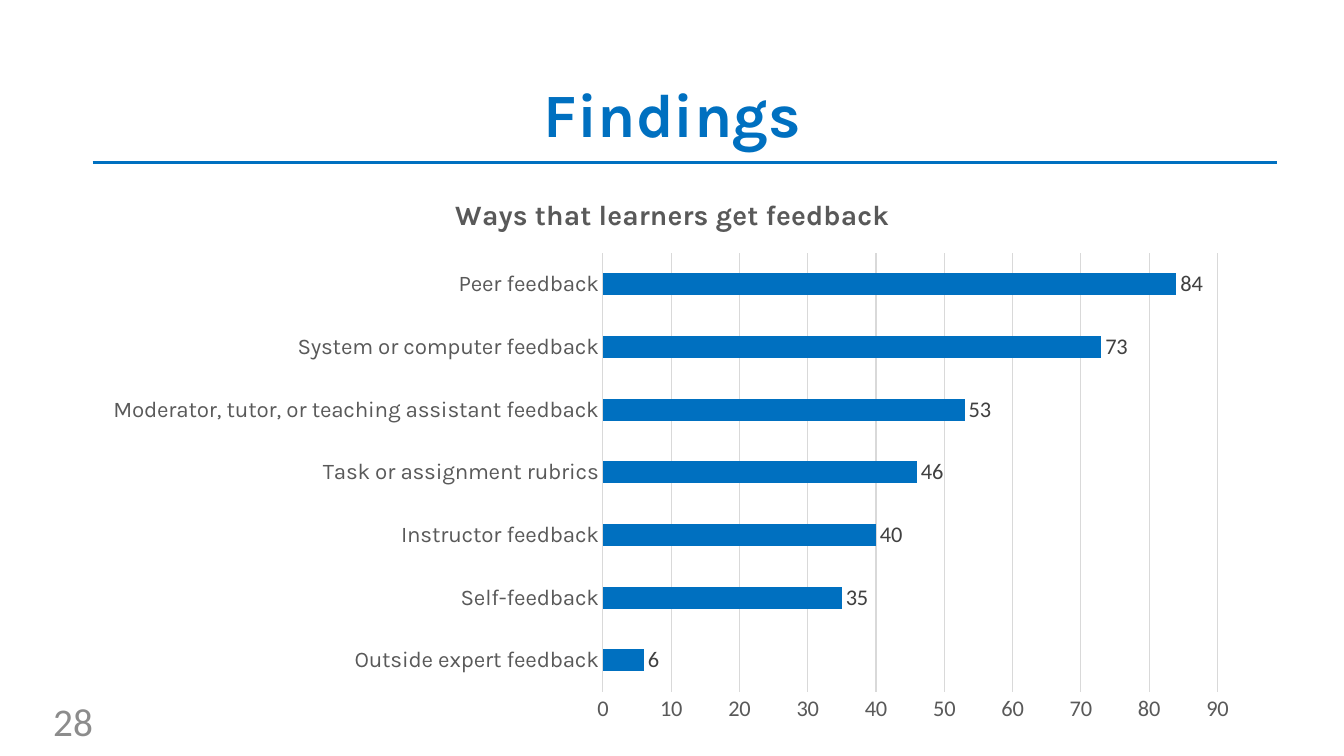
"""Build the Findings slide with a bar chart of the ways learners get feedback."""
from lxml import etree
from pptx import Presentation
from pptx.chart.data import CategoryChartData
from pptx.dml.color import RGBColor
from pptx.enum.chart import XL_CHART_TYPE, XL_LABEL_POSITION, XL_TICK_MARK
from pptx.enum.shapes import MSO_CONNECTOR
from pptx.enum.text import MSO_ANCHOR, PP_ALIGN
from pptx.oxml.ns import qn
from pptx.util import Inches, Pt

BAR_CLUSTERED = XL_CHART_TYPE.BAR_CLUSTERED
OUTSIDE_END = XL_LABEL_POSITION.OUTSIDE_END
NO_TICK = XL_TICK_MARK.NONE
STRAIGHT = MSO_CONNECTOR.STRAIGHT
MIDDLE = MSO_ANCHOR.MIDDLE
CENTER, RIGHT = PP_ALIGN.CENTER, PP_ALIGN.RIGHT

BLUE, TEXT_GRAY, GRID_GRAY = "0070C0", "595959", "D9D9D9"
FEEDBACK = {
    "Outside expert feedback": 6,
    "Self-feedback": 35,
    "Instructor feedback": 40,
    "Task or assignment rubrics": 46,
    "Moderator, tutor, or teaching assistant feedback": 53,
    "System or computer feedback": 73,
    "Peer feedback": 84,
}
PLOT_LAYOUT = {"x": 0.44, "y": 0.14, "w": 0.53, "h": 0.78}


def rgb(color):
    return RGBColor.from_string(color)


def style(font, name, size, color, bold=False):
    font.name, font.size, font.bold = name, Pt(size), bold
    font.color.rgb = rgb(color)


prs = Presentation()
prs.slide_width, prs.slide_height = Inches(13.33), Inches(7.5)
slide = prs.slides.add_slide(prs.slide_layouts[5])

title = slide.shapes.title
title.left, title.top = Inches(0.92), Inches(0.44)
title.width, title.height = Inches(11.5), Inches(1.45)
title.text_frame.vertical_anchor = MIDDLE
heading = title.text_frame.paragraphs[0]
heading.alignment = CENTER
heading.line_spacing = 0.9
heading_run = heading.add_run()
heading_run.text = "Findings"
style(heading_run.font, "Karla", 44, BLUE, True)

rule = slide.shapes.add_connector(
    STRAIGHT, Inches(0.92), Inches(1.61), Inches(12.67), Inches(1.61))
rule.line.color.rgb = rgb(BLUE)
rule.line.width = Pt(2)
etree.SubElement(rule._element.spPr, qn("a:effectLst"))

page_box = slide.shapes.add_textbox(
    Inches(0.02), Inches(6.95), Inches(1), Inches(0.4))
page_box.text_frame.word_wrap = True
page_box.text_frame.vertical_anchor = MIDDLE
page_number = page_box.text_frame.paragraphs[0]
page_number.alignment = RIGHT
page_run = page_number.add_run()
page_run.text = "28"
style(page_run.font, "Calibri", 28, "8C8C8C")

feedback_data = CategoryChartData(number_format="0")
feedback_data.categories = list(FEEDBACK)
feedback_data.add_series("Series 1", list(FEEDBACK.values()))
chart = slide.shapes.add_chart(
    BAR_CLUSTERED, Inches(0.92), Inches(1.73), Inches(11.5), Inches(5.58),
    feedback_data).chart
style(chart.font, "Calibri", 10, "000000")
chart.has_legend = False
chart.has_title = True
chart_title_run = chart.chart_title.text_frame.paragraphs[0].add_run()
chart_title_run.text = "Ways that learners get feedback"
style(chart_title_run.font, "Karla", 20, TEXT_GRAY, True)
chart.chart_title.include_in_layout = False

bars = chart.plots[0]
bars.gap_width = 182
bars.vary_by_categories = False
bar_fill = bars.series[0].format.fill
bar_fill.solid()
bar_fill.fore_color.rgb = rgb(BLUE)
bars.has_data_labels = True
labels = bars.data_labels
labels.show_value = True
labels.position = OUTSIDE_END
labels.number_format, labels.number_format_is_linked = "0", False
style(labels.font, "Calibri", 16, "404040")

categories, values = chart.category_axis, chart.value_axis
for axis, font_name in ((categories, "Karla"), (values, "Calibri")):
    axis.major_tick_mark = axis.minor_tick_mark = NO_TICK
    style(axis.tick_labels.font, font_name, 16, TEXT_GRAY)
categories.has_major_gridlines = False
values.has_major_gridlines = True
for line in (categories.format.line, values.major_gridlines.format.line):
    line.color.rgb = rgb(GRID_GRAY)
    line.width = Pt(0.75)
values.format.line.fill.background()
values.minimum_scale, values.maximum_scale, values.major_unit = 0, 90, 10
values.tick_labels.number_format = "0"
values.tick_labels.number_format_is_linked = False

plot_area = chart._chartSpace.chart.plotArea
for automatic in plot_area.findall(qn("c:layout")):
    plot_area.remove(automatic)
layout = etree.Element(qn("c:layout"))
plot_area.insert(0, layout)
manual = etree.SubElement(layout, qn("c:manualLayout"))
settings = {"layoutTarget": "inner", "xMode": "edge", "yMode": "edge", **PLOT_LAYOUT}
for tag, value in settings.items():
    etree.SubElement(manual, qn(f"c:{tag}")).set("val", str(value))

prs.save("out.pptx")
